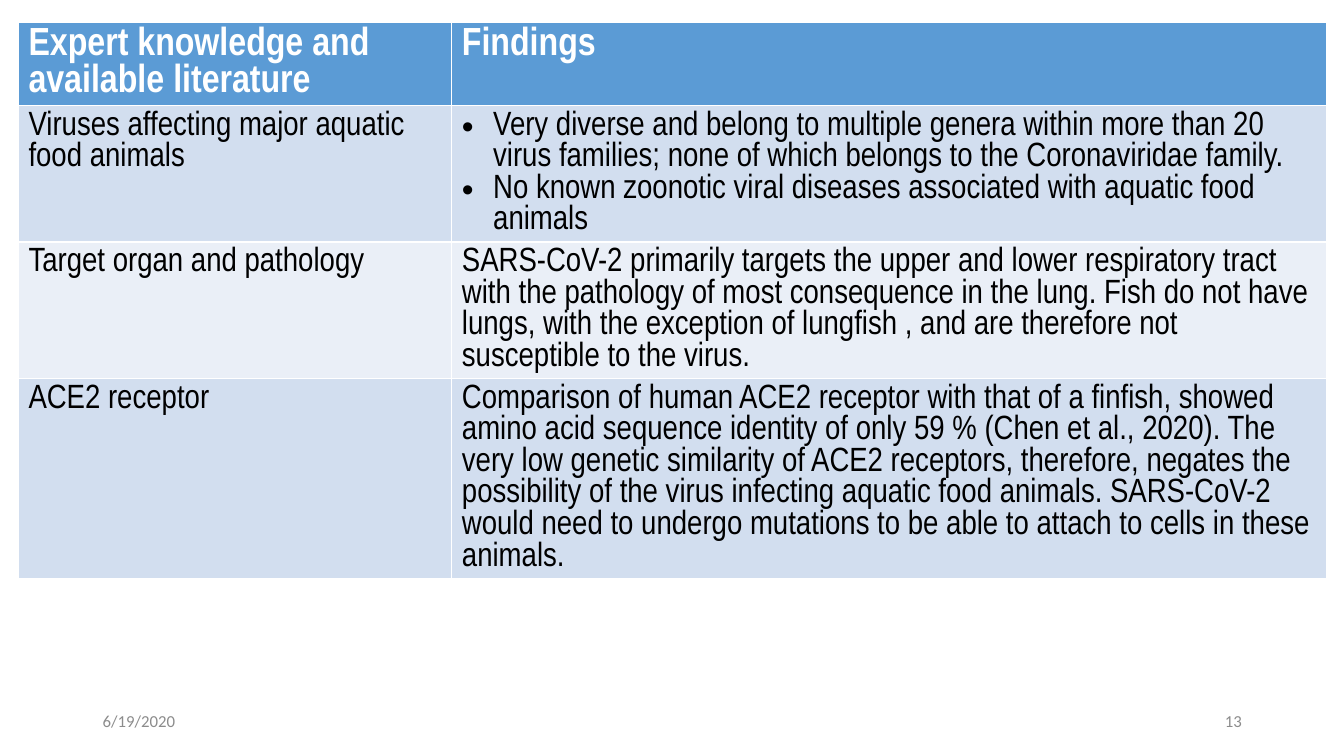
from dataclasses import dataclass

from lxml import etree
from pptx import Presentation, util as u
from pptx.dml.color import RGBColor
from pptx.enum import text
from pptx.oxml.ns import qn


@dataclass(frozen=True)
class Theme:
    table_font: str = "Arial Narrow"
    footer_font: str = "Calibri"
    head_size: int = 28
    body_size: int = 24
    footer_size: int = 12
    head_fill: str = "5B9BD5"
    bands: tuple = ("D2DEEF", "EAEFF7")
    head_text: str = "FFFFFF"
    body_text: str = "000000"
    footer_text: str = "8C8C8C"
    bullet_indent: float = 0.31


class SlideBuilder:
    """Places elements on one slide, with lengths as shares of its size."""

    def __init__(self, prs, theme):
        self.theme = theme
        self.width, self.height = prs.slide_width, prs.slide_height
        self.s = prs.slides.add_slide(prs.slide_layouts[6])

    def x(self, share):
        return u.Emu(round(self.width * share))

    def y(self, share):
        return u.Emu(round(self.height * share))

    def style(self, p, font, size, color, bold=False):
        for r in p.runs:
            r.font.name, r.font.size, r.font.bold = font, u.Pt(size), bold
            r.font.color.rgb = RGBColor.from_string(color)

    def bullet(self, p):
        indent = u.Inches(self.theme.bullet_indent)
        pPr = p._p.get_or_add_pPr()
        pPr.set("marL", str(indent))
        pPr.set("indent", str(-indent))
        etree.SubElement(pPr, qn("a:buFont"), typeface="Arial")
        etree.SubElement(pPr, qn("a:buChar"), char="•")

    def cell(self, cell, content, fill, size, color, bold):
        """Fills a cell; a list of texts becomes bullets."""
        cell.fill.solid()
        cell.fill.fore_color.rgb = RGBColor.from_string(fill)
        bulleted = isinstance(content, list)
        cell.text_frame.text = "\n".join(content) if bulleted else content
        for p in cell.text_frame.paragraphs:
            self.style(p, self.theme.table_font, size, color, bold)
            if bulleted:
                self.bullet(p)

    def table(self, rows, left, top, col_shares, row_shares):
        t = self.theme
        table = self.s.shapes.add_table(
            len(rows), len(col_shares), self.x(left), self.y(top),
            self.x(sum(col_shares)), self.y(sum(row_shares))).table
        for col, share in zip(table.columns, col_shares):
            col.width = self.x(share)
        for i, (row, share) in enumerate(zip(rows, row_shares)):
            table.rows[i].height = self.y(share)
            if i == 0:
                look = (t.head_fill, t.head_size, t.head_text, True)
            else:
                look = (t.bands[(i - 1) % 2], t.body_size, t.body_text, False)
            for j, content in enumerate(row):
                self.cell(table.cell(i, j), content, *look)

    def footer(self, content, left, align):
        t = self.theme
        sp = self.s.shapes.add_textbox(
            self.x(left), self.y(0.927), self.x(0.225), self.y(0.053))
        tf = sp.text_frame
        tf.word_wrap = True
        tf.vertical_anchor = text.MSO_ANCHOR.MIDDLE
        tf.text = content
        p = tf.paragraphs[0]
        p.alignment = align
        self.style(p, t.footer_font, t.footer_size, t.footer_text)


ROWS = [
    ("Expert knowledge and available literature", "Findings"),
    ("Viruses affecting major aquatic food animals", [
        "Very diverse and belong to multiple genera within more than 20 virus "
        "families; none of which belongs to the Coronaviridae family.",
        "No known zoonotic viral diseases associated with aquatic food animals",
    ]),
    ("Target organ and pathology",
     "SARS-CoV-2 primarily targets the upper and lower respiratory tract with "
     "the pathology of most consequence in the lung. Fish do not have lungs, "
     "with the exception of lungfish , and are therefore not susceptible to "
     "the virus."),
    ("ACE2 receptor",
     "Comparison of human ACE2 receptor with that of a finfish, showed amino "
     "acid sequence identity of only 59 % (Chen et al., 2020). The very low "
     "genetic similarity of ACE2 receptors, therefore, negates the possibility "
     "of the virus infecting aquatic food animals. SARS-CoV-2 would need to "
     "undergo mutations to be able to attach to cells in these animals."),
]


def main():
    prs = Presentation()
    prs.slide_width, prs.slide_height = u.Inches(13.33), u.Inches(7.5)
    slide = SlideBuilder(prs, Theme())
    slide.table(ROWS, left=0.0137, top=0.029, col_shares=(0.3225, 0.651),
                row_shares=(0.11, 0.18, 0.18, 0.26))
    slide.footer("6/19/2020", 0.069, text.PP_ALIGN.LEFT)
    slide.footer("13", 0.7065, text.PP_ALIGN.RIGHT)
    prs.save("out.pptx")


if __name__ == "__main__":
    main()
